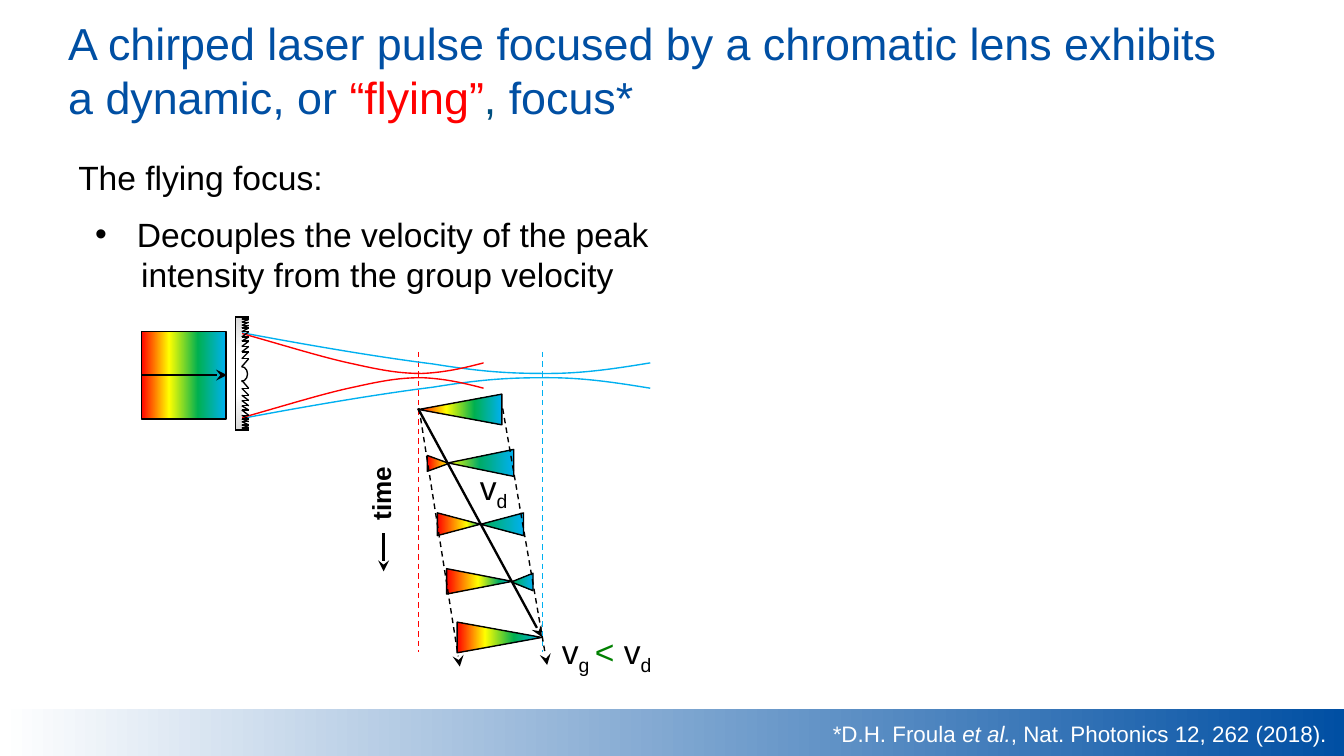
from dataclasses import dataclass
from itertools import pairwise

from lxml import etree
from pptx import Presentation
from pptx import util as u
from pptx.dml.color import RGBColor
from pptx.enum import dml, shapes, text
from pptx.oxml import ns

BLACK = RGBColor(0x00, 0x00, 0x00)
WHITE = RGBColor(0xFF, 0xFF, 0xFF)
GREY = RGBColor(0xD9, 0xD9, 0xD9)
NAVY = RGBColor(0x00, 0x4F, 0xA3)
TEAL = RGBColor(0x00, 0x4F, 0x80)
RED = RGBColor(0xFF, 0x00, 0x00)
YELLOW = RGBColor(0xFF, 0xFF, 0x00)
GREEN = RGBColor(0x00, 0xB0, 0x50)
SEA = RGBColor(0x00, 0xAB, 0x67)
SKY = RGBColor(0x00, 0xB0, 0xF0)
LESS_GREEN = RGBColor(0x00, 0x80, 0x00)

Stops = tuple[tuple[int, RGBColor], ...]
Point = tuple[float, float]
SPECTRUM: Stops = ((0, RED), (33, YELLOW), (67, GREEN), (100, SKY))
BLUE_END: Stops = ((0, GREEN), (100, SKY))


@dataclass
class Wedge:
    """A pulse slice: centre and size as seen, colours from left to right."""
    x: float
    y: float
    length: float
    height: float
    points_right: bool
    stops: Stops


@dataclass
class Part:
    """A stretch of text in one format."""
    words: str
    color: RGBColor = BLACK
    bold: bool = False
    italic: bool = False
    subscript: bool = False


@dataclass
class Beam:
    color: RGBColor
    upper_edge: tuple[Point, ...]  # chain of cubic Bezier control points


WEDGES = [
    Wedge(8.28, 8.76, 0.41, 0.3, True, ((0, RED), (100, YELLOW))),
    Wedge(9.09, 8.75, 1.24, 0.51, False, ((0, YELLOW), (48, SEA), (100, SKY))),
    Wedge(9.44, 12.05, 1.6, 0.58, True, SPECTRUM),
    Wedge(8.7, 7.74, 1.57, 0.58, False, SPECTRUM),
    Wedge(8.67, 9.91, 0.81, 0.43, True, ((0, RED), (69, YELLOW), (100, SEA))),
    Wedge(9.49, 9.91, 0.81, 0.43, False, BLUE_END),
    Wedge(9.06, 10.99, 1.24, 0.48, True,
          ((0, RED), (48, YELLOW), (80, SEA), (100, SKY))),
    Wedge(9.87, 11, 0.41, 0.33, False, BLUE_END),
]
BEAMS = [
    Beam(SKY, ((4.47, 6.27), (5.84, 6.53), (7.21, 6.76), (8.18, 6.88), (9.17, 7.04),
               (9.68, 7.06), (10.36, 7.06), (11.05, 7.06), (11.68, 6.96), (12.29, 6.86))),
    Beam(RED, ((4.45, 6.27), (5.28, 6.5), (6.1, 6.76), (6.68, 6.88), (7.26, 7.01),
               (7.57, 7.06), (7.98, 7.06), (8.41, 7.04), (8.76, 6.96), (9.14, 6.86))),
]
BEAM_AXIS = 7.1
LENS_LEFT, GROOVE_LEFT, GROOVE_RIGHT, LENS_AXIS = 4.45, 4.57, 4.7, 7.06
GROOVES = (1.07, 1.04, 1.02, 0.97, 0.91, 0.86, 0.79, 0.69, 0.61, 0.51, 0.41, 0.28, 0.13)

prs = Presentation()
prs.slide_width, prs.slide_height = u.Cm(25.4), u.Cm(14.29)
slide = prs.slides.add_slide(prs.slide_layouts[6])


def add_line(start: Point, end: Point, color: RGBColor = BLACK, width: float = 0.75,
             dashed: bool = False, arrow: bool = False) -> None:
    line = slide.shapes.add_connector(
        shapes.MSO_CONNECTOR.STRAIGHT, *(u.Cm(v) for v in (*start, *end)))
    line.line.color.rgb = color
    line.line.width = u.Pt(width)
    if dashed:
        line.line.dash_style = dml.MSO_LINE.DASH
    if arrow:
        etree.SubElement(line.line._get_or_add_ln(), ns.qn("a:tailEnd"), type="stealth")
    etree.SubElement(line._element.spPr, ns.qn("a:effectLst"))


def add_gradient_shape(kind: shapes.MSO_SHAPE, left: float, top: float, width: float,
                       height: float, stops: Stops, angle: int = 0,
                       outlined: bool = True, rotation: int = 0) -> None:
    shape = slide.shapes.add_shape(kind, *(u.Cm(v) for v in (left, top, width, height)))
    shape.shadow.inherit = False
    shape.rotation = rotation
    shape.fill.gradient()
    gradient = shape._element.spPr.find(ns.qn("a:gradFill"))
    gradient.set("rotWithShape", "1")
    stop_list = gradient.find(ns.qn("a:gsLst"))
    for old in list(stop_list):
        stop_list.remove(old)
    for position, color in stops:
        stop = etree.SubElement(stop_list, ns.qn("a:gs"), pos=str(position * 1000))
        etree.SubElement(stop, ns.qn("a:srgbClr"), val=str(color))
    gradient.find(ns.qn("a:lin")).set("ang", str(angle * 60000))
    if outlined:
        shape.line.color.rgb = BLACK
        shape.line.width = u.Pt(0.75)
    else:
        shape.line.fill.background()


def add_wedge(wedge: Wedge) -> None:
    # The triangle's tip is its top, so colours run from tip to base
    stops = wedge.stops
    if wedge.points_right:
        stops = tuple((100 - position, color) for position, color in reversed(stops))
    add_gradient_shape(shapes.MSO_SHAPE.ISOSCELES_TRIANGLE,
                       wedge.x - wedge.height / 2, wedge.y - wedge.length / 2,
                       wedge.height, wedge.length, stops, angle=90,
                       rotation=90 if wedge.points_right else 270)


def add_curve(controls: list[Point], color: RGBColor) -> None:
    points = [(u.Cm(x), u.Cm(y)) for x, y in controls]
    builder = slide.shapes.build_freeform(*points[0])
    builder.add_line_segments(points[1:], close=False)
    curve = builder.convert_to_shape()
    # Join each three straight segments into one cubic segment
    outline = next(curve._element.iter(ns.qn("a:path")))
    segments = outline.findall(ns.qn("a:lnTo"))
    for i in range(0, len(segments), 3):
        cubic = etree.SubElement(outline, ns.qn("a:cubicBezTo"))
        for segment in segments[i:i + 3]:
            cubic.append(segment[0])
            outline.remove(segment)
    curve.shadow.inherit = False
    curve.fill.background()
    curve.line.color.rgb = color
    curve.line.width = u.Pt(0.75)


def add_text(left: float, top: float, width: float, height: float, size: int,
             paragraphs: list[list[Part]], wrap: bool = False, rotation: int = 0):
    box = slide.shapes.add_textbox(*(u.Cm(v) for v in (left, top, width, height)))
    box.rotation = rotation
    frame = box.text_frame
    frame.word_wrap = wrap
    if not wrap:
        frame.auto_size = text.MSO_AUTO_SIZE.SHAPE_TO_FIT_TEXT
    for i, parts in enumerate(paragraphs):
        paragraph = frame.add_paragraph() if i else frame.paragraphs[0]
        for part in parts:
            run = paragraph.add_run()
            run.text = part.words
            run.font.name, run.font.size = "Arial", u.Pt(size)
            run.font.color.rgb = part.color
            run.font.bold, run.font.italic = part.bold, part.italic
            if part.subscript:
                run._r.get_or_add_rPr().set("baseline", "-25000")
    return frame


# Footer band and citation
add_gradient_shape(shapes.MSO_SHAPE.RECTANGLE, 0.02, 13.41, 25.4, 0.91,
                   ((0, WHITE), (100, NAVY)), outlined=False)
add_text(15.49, 13.48, 9.96, 0.76, 12, [[
    Part("*D.H. Froula ", WHITE), Part("et al.", WHITE, italic=True),
    Part(", Nat. Photonics 12, 262 (2018).", WHITE)]])

# Title
title = add_text(1.29, 0.18, 22.05, 1.55, 24, [[
    Part("A chirped laser pulse focused by a chromatic lens exhibits a dynamic, or ", NAVY),
    Part("“flying”", RED), Part(", ", TEAL), Part("focus*", NAVY)]], wrap=True)
title.margin_left = 0

# Statement
add_text(1.23, 2.85, 5.18, 1.02, 18, [[Part("The flying focus:")]])
claim = add_text(1.55, 3.91, 11.1, 1.8, 18, [
    [Part("Decouples the velocity of the peak")],
    [Part("intensity from the group velocity")]])
for paragraph, indent in zip(claim.paragraphs, (0.79, 0.87)):
    paragraph._p.get_or_add_pPr().set("marL", str(u.Cm(indent)))
bulleted = claim.paragraphs[0]._p.get_or_add_pPr()
bulleted.set("indent", str(-u.Cm(0.79)))
etree.SubElement(bulleted, ns.qn("a:buFont"), typeface="Arial")
etree.SubElement(bulleted, ns.qn("a:buChar"), char="•")

# Focal planes and beam edges, mirrored about the beam axis
for x, color in ((10.25, SKY), (7.91, RED)):
    add_line((x, 6.65), (x, 12.32), color, dashed=True)
for beam in BEAMS:
    add_curve(list(beam.upper_edge), beam.color)
    add_curve([(x, 2 * BEAM_AXIS - y) for x, y in beam.upper_edge], beam.color)

# Lens with grooves mirrored about its axis
rim = GROOVES[0]
add_gradient_shape(shapes.MSO_SHAPE.RECTANGLE, LENS_LEFT, LENS_AXIS - rim,
                   GROOVE_LEFT - LENS_LEFT, 2 * rim,
                   ((0, GREY), (33, WHITE), (67, WHITE), (100, GREY)), 90, outlined=False)
for side in (-1, 1):
    edge = LENS_AXIS + side * rim
    add_line((LENS_LEFT, edge), (GROOVE_LEFT, edge))
    for outer, inner in pairwise(GROOVES):
        y, next_y = LENS_AXIS + side * outer, LENS_AXIS + side * inner
        add_line((GROOVE_LEFT, y), (GROOVE_RIGHT, y))
        add_line((GROOVE_RIGHT, y), (GROOVE_LEFT, next_y))
add_line((LENS_LEFT, LENS_AXIS - rim), (LENS_LEFT, LENS_AXIS + rim))
bulge = slide.shapes.add_shape(shapes.MSO_SHAPE.ARC, u.Cm(4.45), u.Cm(6.93),
                               u.Cm(0.23), u.Cm(0.28))
bulge.adjustments[0], bulge.adjustments[1] = 162, 54
bulge.shadow.inherit = False
bulge.fill.background()
bulge.line.color.rgb = BLACK
bulge.line.width = u.Pt(0.75)

# Incoming pulse
add_gradient_shape(shapes.MSO_SHAPE.RECTANGLE, 2.67, 6.27, 1.6, 1.65, SPECTRUM)
add_line((2.67, 7.09), (4.29, 7.09), arrow=True)

# Pulse at successive times, with its velocities
for wedge in WEDGES:
    add_wedge(wedge)
add_line((9.5, 7.72), (10.34, 12.57), dashed=True, arrow=True)
add_line((7.92, 7.72), (8.69, 12.6), dashed=True, arrow=True)
add_line((7.25, 10.08), (7.25, 10.8), width=1.25, arrow=True)
add_line((7.9, 7.72), (10.24, 12.04), width=1.25, arrow=True)
add_text(6.43, 8.88, 1.55, 0.86, 14, [[Part("time", bold=True)]], rotation=270)
drift = [Part("v"), Part("d", subscript=True)]
add_text(8.82, 8.7, 1.12, 1.02, 18, [drift])
add_text(10.37, 11.8, 2.29, 1.02, 18, [[
    Part("v"), Part("g ", subscript=True), Part("< ", LESS_GREEN), *drift]])

prs.save("out.pptx")
